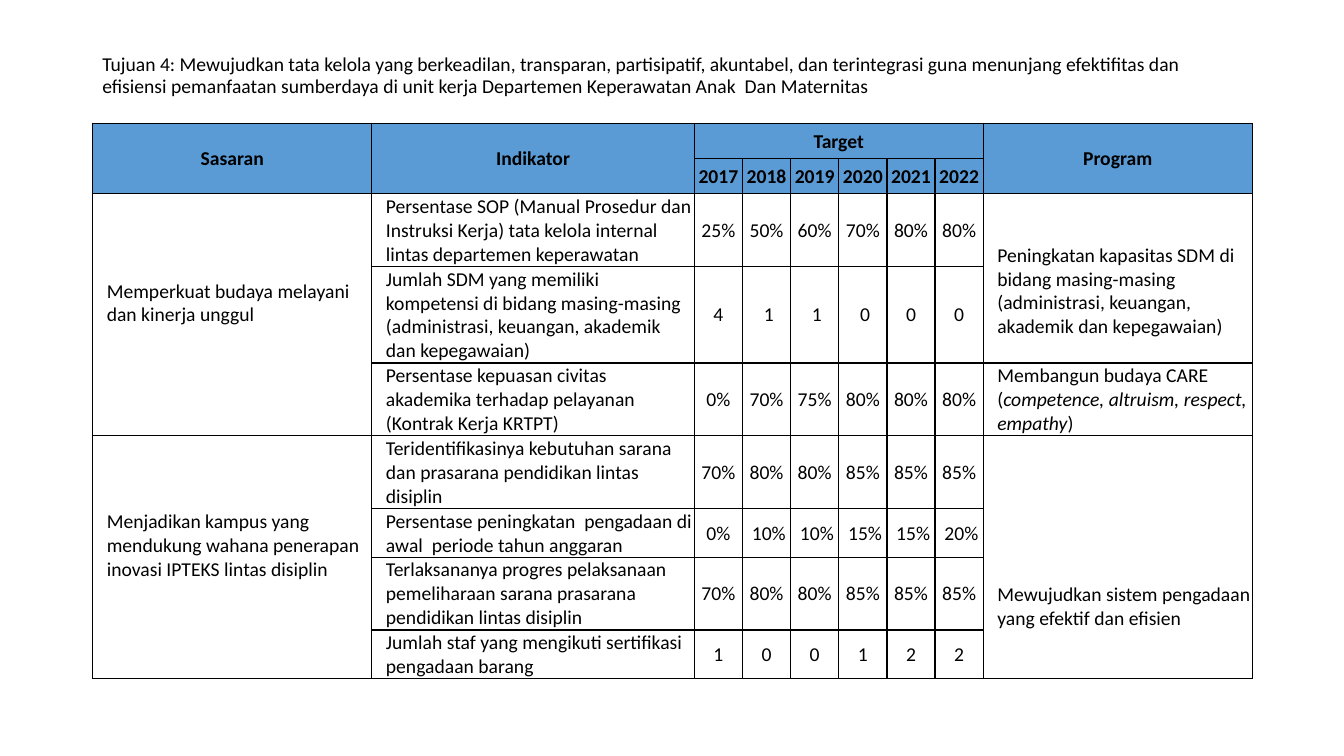
from pptx import Presentation
from pptx.util import Pt
from pptx.dml.color import RGBColor
from pptx.enum.text import MSO_ANCHOR, PP_ALIGN
from pptx.oxml import parse_xml
from pptx.oxml.ns import nsdecls

COLORS = {"text": "000000", "border": "000000", "header": "5B9BD5"}
FONT = "Calibri"
LINE_HEIGHT = 17.1
INDENT = 9.4
TITLE = (
    "Tujuan 4: Mewujudkan tata kelola yang berkeadilan, transparan, partisipatif, "
    "akuntabel, dan terintegrasi guna menunjang efektifitas dan efisiensi pemanfaatan "
    "sumberdaya di unit kerja Departemen Keperawatan Anak  Dan Maternitas"
)
YEARS = ["2017", "2018", "2019", "2020", "2021", "2022"]
INDICATORS = [
    ("Persentase SOP (Manual Prosedur dan Instruksi Kerja) tata kelola internal lintas departemen keperawatan",
     ["25%", "50%", "60%", "70%", "80%", "80%"]),
    ("Jumlah SDM yang memiliki kompetensi di bidang masing-masing (administrasi, keuangan, akademik dan kepegawaian)",
     ["4", "1", "1", "0", "0", "0"]),
    ("Persentase kepuasan civitas akademika terhadap pelayanan (Kontrak Kerja KRTPT)",
     ["0%", "70%", "75%", "80%", "80%", "80%"]),
    ("Teridentifikasinya kebutuhan sarana dan prasarana pendidikan lintas disiplin",
     ["70%", "80%", "80%", "85%", "85%", "85%"]),
    ("Persentase peningkatan  pengadaan di awal  periode tahun anggaran",
     ["0%", "10%", "10%", "15%", "15%", "20%"]),
    ("Terlaksananya progres pelaksanaan pemeliharaan sarana prasarana pendidikan lintas disiplin",
     ["70%", "80%", "80%", "85%", "85%", "85%"]),
    ("Jumlah staf yang mengikuti sertifikasi pengadaan barang",
     ["1", "0", "0", "1", "2", "2"]),
]
GOALS = [
    (2, 4, "Memperkuat budaya melayani dan kinerja unggul"),
    (5, 8, "Menjadikan kampus yang mendukung wahana penerapan inovasi IPTEKS lintas disiplin"),
]
PROGRAMS = [
    (2, 3, 1, "Peningkatan kapasitas SDM di bidang masing-masing (administrasi, keuangan, akademik dan kepegawaian)"),
    (4, 4, 0, "Membangun budaya CARE (|competence, altruism, respect, empathy|)"),
    (5, 8, 2, "Mewujudkan sistem pengadaan yang efektif dan efisien"),
]
NUDGED = {3: range(3, 6), 6: range(3, 8)}
COLUMN_WIDTHS = [199.4, 230.4] + [34.4] * 6 + [192.2]
ROW_HEIGHTS = [25.2, 25.2, 52, 68.9, 52, 52, 34.8, 52, 34.8]


def style_run(span, bold=False, italic=False):
    span.font.name = FONT
    span.font.size = Pt(14)
    span.font.bold = bold
    span.font.italic = italic
    span.font.color.rgb = RGBColor.from_string(COLORS["text"])


def write_cell(cell, text, align=PP_ALIGN.CENTER, bold=False, left=0.7, bottom=0):
    para = cell.text_frame.paragraphs[0]
    para.alignment = align
    for index, part in enumerate(text.split("|")):
        span = para.add_run()
        span.text = part
        style_run(span, bold, index % 2 == 1)
    cell.margin_left = Pt(left)
    cell.margin_bottom = Pt(bottom)


deck = Presentation()
deck.slide_width, deck.slide_height = Pt(960), Pt(540)
page = deck.slides.add_slide(deck.slide_layouts[6])

title_box = page.shapes.add_textbox(Pt(66), Pt(28.8), Pt(828), Pt(51.1))
title_frame = title_box.text_frame
title_frame.word_wrap = True
title_frame.vertical_anchor = MSO_ANCHOR.MIDDLE
title_frame.text = TITLE
title_frame.paragraphs[0].line_spacing = 0.9
style_run(title_frame.paragraphs[0].runs[0])

table = page.shapes.add_table(
    len(ROW_HEIGHTS), len(COLUMN_WIDTHS), Pt(66.2), Pt(88), Pt(sum(COLUMN_WIDTHS)), Pt(sum(ROW_HEIGHTS))
).table
table.first_row = False
table.horz_banding = False
for column, width in zip(table.columns, COLUMN_WIDTHS):
    column.width = Pt(width)

for row_index, (row, height) in enumerate(zip(table.rows, ROW_HEIGHTS)):
    row.height = Pt(height)
    for cell in row.cells:
        cell.vertical_anchor = MSO_ANCHOR.MIDDLE
        cell.margin_left = cell.margin_right = cell.margin_top = Pt(0.7)
        cell.margin_bottom = 0
        if row_index < 2:
            cell.fill.solid()
            cell.fill.fore_color.rgb = RGBColor.from_string(COLORS["header"])
        else:
            cell.fill.background()
        properties = cell._tc.get_or_add_tcPr()
        for position, side in enumerate(["lnL", "lnR", "lnT", "lnB"]):
            properties.insert(position, parse_xml(
                f'<a:{side} {nsdecls("a")} w="{Pt(1)}"><a:solidFill>'
                f'<a:srgbClr val="{COLORS["border"]}"/></a:solidFill></a:{side}>'
            ))

for column_index, heading in [(0, "Sasaran"), (1, "Indikator"), (8, "Program")]:
    table.cell(0, column_index).merge(table.cell(1, column_index))
    write_cell(table.cell(0, column_index), heading, bold=True)
table.cell(0, 2).merge(table.cell(0, 7))
write_cell(table.cell(0, 2), "Target", bold=True)
for column_index, year in enumerate(YEARS, 2):
    write_cell(table.cell(1, column_index), year, bold=True)

for row_index, (indicator, targets) in enumerate(INDICATORS, 2):
    write_cell(table.cell(row_index, 1), indicator, PP_ALIGN.LEFT, left=INDENT + 0.7)
    for column_index, target in enumerate(targets, 2):
        left = 3.9 if column_index in NUDGED.get(row_index, []) else 0.7
        write_cell(table.cell(row_index, column_index), target, left=left)

for first, last, goal in GOALS:
    table.cell(first, 0).merge(table.cell(last, 0))
    write_cell(table.cell(first, 0), goal, PP_ALIGN.LEFT, left=INDENT + 0.7, bottom=LINE_HEIGHT)

for first, last, lines_below, program in PROGRAMS:
    cell = table.cell(first, 8)
    if last > first:
        cell.merge(table.cell(last, 8))
    write_cell(cell, program, PP_ALIGN.LEFT, left=INDENT + 0.7, bottom=lines_below * LINE_HEIGHT)
    cell.vertical_anchor = MSO_ANCHOR.BOTTOM

deck.save("out.pptx")
